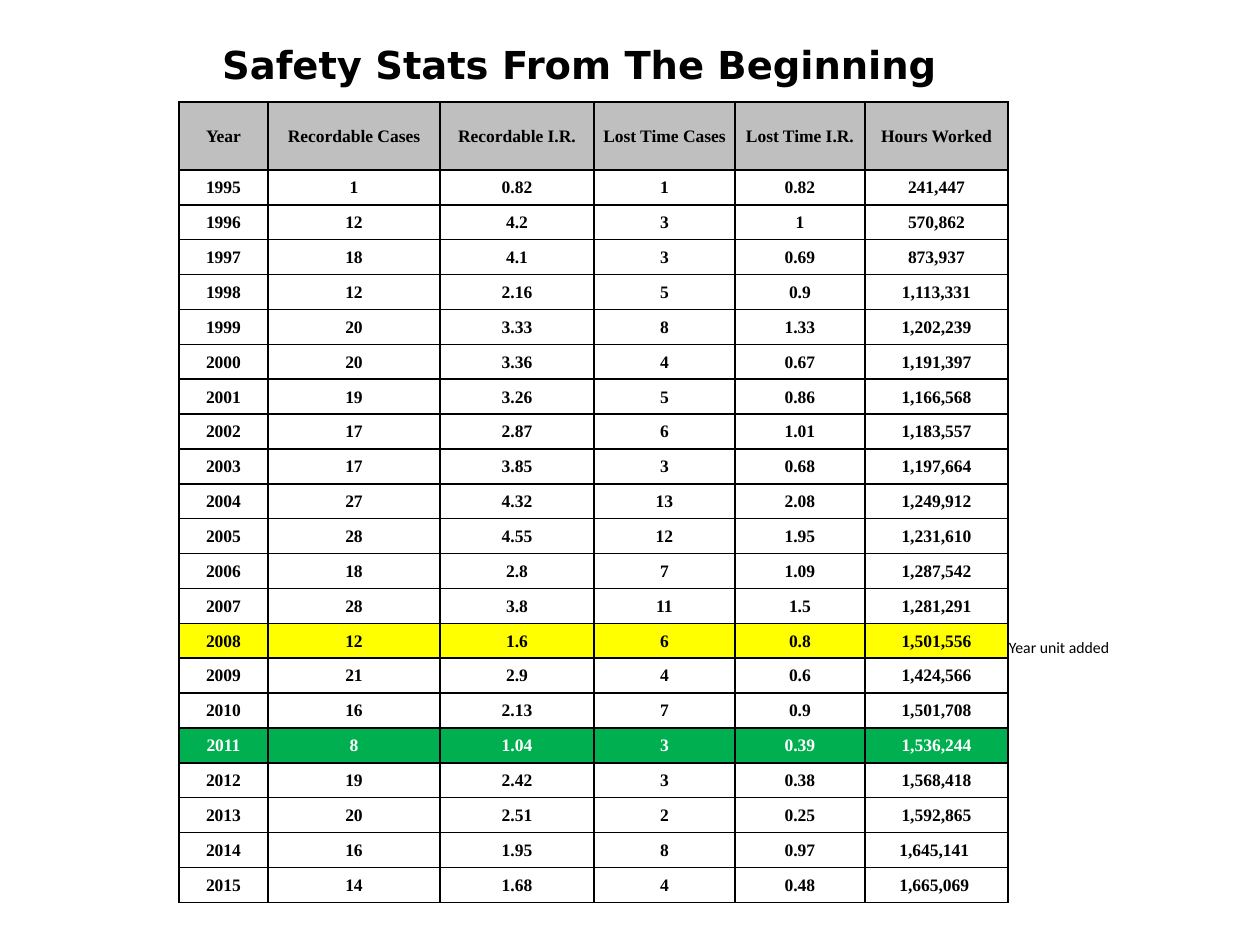
from lxml.etree import SubElement
from pptx import Presentation
from pptx.dml.color import RGBColor
from pptx.enum.text import MSO_ANCHOR, PP_ALIGN
from pptx.oxml.ns import qn
from pptx.util import Emu, Pt

SCALE = 914400 // 126  # EMU per px
COLORS = {
    "text": "000000",
    "light_text": "FFFFFF",
    "border": "000000",
    "header": "BFBFBF",
    "merger": "FFFF00",
    "best": "00B050",
}
NO_STYLE = "{2D5ABB26-0587-4C30-8999-92F81FD0307C}"
COLUMN_WIDTHS = [89, 172, 154, 141, 130, 143, 90, 89]
HEADER_HEIGHT, BODY_HEIGHT = 68, 733
HEADERS = ["Year", "Recordable Cases", "Recordable I.R.",
           "Lost Time Cases", "Lost Time I.R.", "Hours Worked"]
STATS = [
    ["1995", "1", "0.82", "1", "0.82", "241,447"],
    ["1996", "12", "4.2", "3", "1", "570,862"],
    ["1997", "18", "4.1", "3", "0.69", "873,937"],
    ["1998", "12", "2.16", "5", "0.9", "1,113,331"],
    ["1999", "20", "3.33", "8", "1.33", "1,202,239"],
    ["2000", "20", "3.36", "4", "0.67", "1,191,397"],
    ["2001", "19", "3.26", "5", "0.86", "1,166,568"],
    ["2002", "17", "2.87", "6", "1.01", "1,183,557"],
    ["2003", "17", "3.85", "3", "0.68", "1,197,664"],
    ["2004", "27", "4.32", "13", "2.08", "1,249,912"],
    ["2005", "28", "4.55", "12", "1.95", "1,231,610"],
    ["2006", "18", "2.8", "7", "1.09", "1,287,542"],
    ["2007", "28", "3.8", "11", "1.5", "1,281,291"],
    ["2008", "12", "1.6", "6", "0.8", "1,501,556"],
    ["2009", "21", "2.9", "4", "0.6", "1,424,566"],
    ["2010", "16", "2.13", "7", "0.9", "1,501,708"],
    ["2011", "8", "1.04", "3", "0.39", "1,536,244"],
    ["2012", "19", "2.42", "3", "0.38", "1,568,418"],
    ["2013", "20", "2.51", "2", "0.25", "1,592,865"],
    ["2014", "16", "1.95", "8", "0.97", "1,645,141 "],
    ["2015", "14", "1.68", "4", "0.48", "1,665,069 "],
]
ROW_FILLS = {"Year": "header", "2008": "merger", "2011": "best"}
NOTES = {"2008": "Year unit added"}


def px(value):
    return Emu(value * SCALE)


def rgb(name):
    return RGBColor.from_string(COLORS[name])


def write_text(frame, text, *, size=10, font="Times New Roman", color="text",
               bold=True, align=PP_ALIGN.CENTER, line_spacing=None):
    paragraph = frame.paragraphs[0]
    paragraph.alignment = align
    paragraph.line_spacing = line_spacing
    if not text:  # keeps an empty cell from stretching its row
        SubElement(paragraph._p, qn("a:endParaRPr"), sz=str(size * 100))
        return
    run = paragraph.add_run()
    run.text = text
    run.font.size = Pt(size)
    run.font.name = font
    run.font.bold = bold
    run.font.color.rgb = rgb(color)


def add_title(slide, text):
    box = slide.shapes.add_textbox(px(186), px(44), px(800), px(60))
    box.text_frame.word_wrap = True
    write_text(box.text_frame, text, size=22, font="DejaVu Sans",
               line_spacing=0.8)


def set_borders(cell, visible_sides):
    properties = cell._tc.get_or_add_tcPr()
    for side in "LRTB":
        line = SubElement(properties, qn(f"a:ln{side}"), w=str(Pt(1)))
        if side in visible_sides:
            fill = SubElement(line, qn("a:solidFill"))
            SubElement(fill, qn("a:srgbClr"), val=COLORS["border"])
        else:
            SubElement(line, qn("a:noFill"))


def format_cell(cell, text, *, borders="", fill=None,
                anchor=MSO_ANCHOR.MIDDLE, **text_format):
    cell.margin_left = cell.margin_right = cell.margin_top = px(1)
    cell.margin_bottom = 0
    cell.vertical_anchor = anchor
    set_borders(cell, borders)
    if fill:
        cell.fill.solid()
        cell.fill.fore_color.rgb = rgb(fill)
    else:
        cell.fill.background()
    write_text(cell.text_frame, text, **text_format)


def add_stats_table(slide):
    rows = [HEADERS] + STATS
    frame = slide.shapes.add_table(
        len(rows), len(COLUMN_WIDTHS), px(179), px(102),
        px(sum(COLUMN_WIDTHS)), px(HEADER_HEIGHT + BODY_HEIGHT))
    table = frame.table
    table.first_row = table.horz_banding = False
    table._tbl.tblPr.find(qn("a:tableStyleId")).text = NO_STYLE

    for column, width in zip(table.columns, COLUMN_WIDTHS):
        column.width = px(width)
    for row in table.rows:
        row.height = Emu(px(BODY_HEIGHT) // len(STATS))
    table.rows[0].height = px(HEADER_HEIGHT)

    for row_index, values in enumerate(rows):
        fill = ROW_FILLS.get(values[0])
        color = "light_text" if fill == "best" else "text"
        for column_index, value in enumerate(values):
            format_cell(table.cell(row_index, column_index), value,
                        borders="LRTB", fill=fill, color=color)

        # Margin columns hold the side notes
        note_cell = table.cell(row_index, len(values))
        last_cell = table.cell(row_index, len(values) + 1)
        note = NOTES.get(values[0], "")
        format_cell(note_cell, note, borders="L", anchor=MSO_ANCHOR.BOTTOM,
                    size=9, font="Calibri", bold=False, align=PP_ALIGN.LEFT)
        format_cell(last_cell, "")
        if note:
            note_cell.merge(last_cell)


def main():
    presentation = Presentation()
    presentation.slide_width = px(1260)
    presentation.slide_height = px(945)
    slide = presentation.slides.add_slide(presentation.slide_layouts[6])
    add_title(slide, "Safety Stats From The Beginning ")
    add_stats_table(slide)
    presentation.save("out.pptx")


if __name__ == "__main__":
    main()
